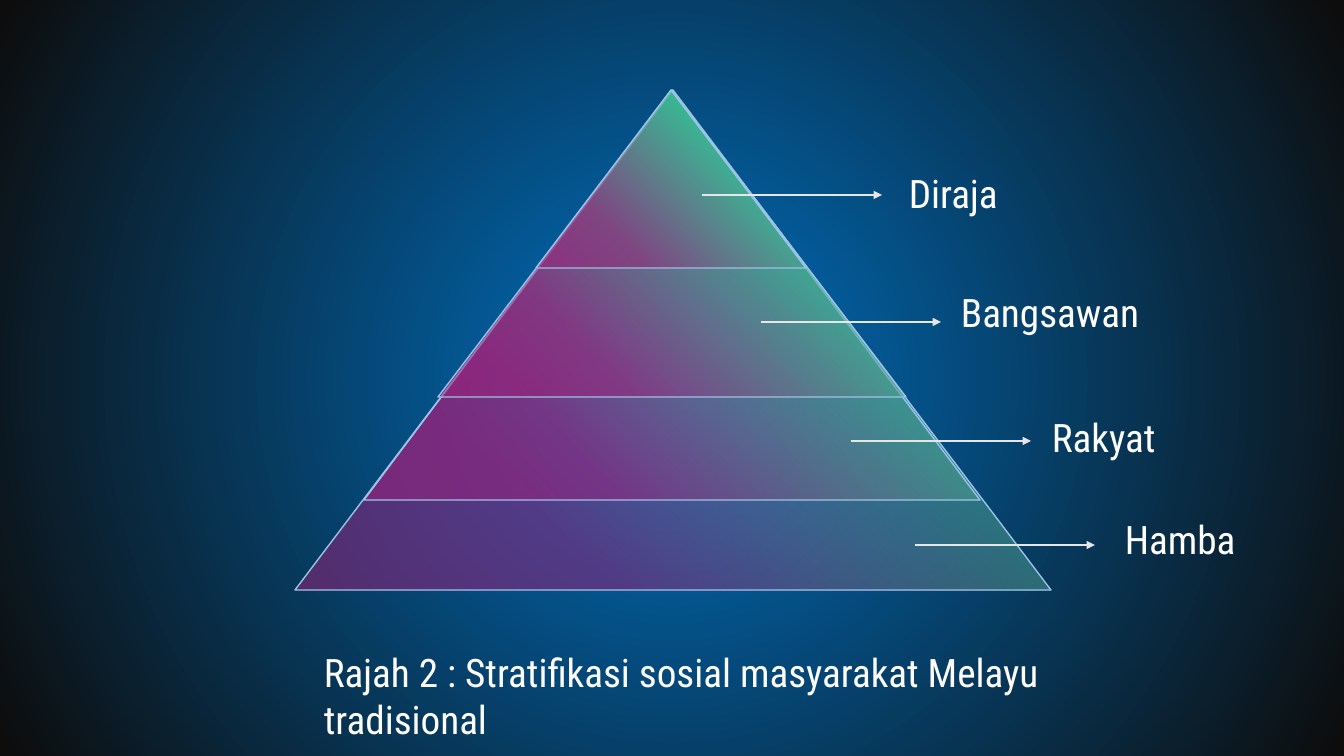
from dataclasses import dataclass

from pptx import Presentation
from pptx import util as u
from pptx.dml.color import RGBColor
from pptx.enum import shapes, text
from pptx.oxml import parse_xml
from pptx.oxml.ns import nsdecls, qn

SCALE = 914400 / 100.8


def px(n):
    return u.Emu(round(n * SCALE))


@dataclass(frozen=True)
class Theme:
    font: str = "Roboto Condensed"
    size: int = 28
    ink: str = "FFFFFF"
    edge: str = "9DC3E6"
    arrow: str = "E7E6E6"
    night: tuple = ((0, "0070C0", 100), (99, "0D0D0D", 100))
    tier: tuple = ((15, "19FBA0", 50), (74, "A0207B", 50))
    center: tuple = (50, 50, 50, 50)
    corner: tuple = (100, 0, 0, 100)


def write(frame, words, font, size, color):
    run = frame.paragraphs[0].add_run()
    run.text = words
    run.font.name = font
    run.font.size = u.Pt(size)
    run.font.color.rgb = RGBColor.from_string(color)


def glow(shape, stops, focus):
    marks = "".join(
        f'<a:gs pos="{pos * 1000}"><a:srgbClr val="{color}">'
        f'<a:alpha val="{alpha * 1000}"/></a:srgbClr></a:gs>'
        for pos, color, alpha in stops
    )
    sides = " ".join(f'{side}="{n * 1000}"' for side, n in zip("ltrb", focus))
    fill = parse_xml(
        f'<a:gradFill {nsdecls("a")} rotWithShape="1"><a:gsLst>{marks}</a:gsLst>'
        f'<a:path path="circle"><a:fillToRect {sides}/></a:path></a:gradFill>'
    )
    shape.element.spPr.find(qn("a:prstGeom")).addnext(fill)


class Board:
    def __init__(self, slide, theme):
        self.items = slide.shapes
        self.theme = theme

    def shape(self, kind, box, stops, focus, edge=None):
        item = self.items.add_shape(kind, *map(px, box))
        item.shadow.inherit = False
        glow(item, stops, focus)
        if edge:
            item.line.color.rgb = RGBColor.from_string(edge)
            item.line.width = u.Pt(1)
        else:
            item.line.fill.background()

    def arrow(self, x, y, length):
        line = self.items.add_connector(
            shapes.MSO_CONNECTOR.STRAIGHT, px(x), px(y), px(x + length), px(y)
        )
        line.line.color.rgb = RGBColor.from_string(self.theme.arrow)
        line.line.width = u.Pt(1.5)
        line.line.fill
        props = line.element.spPr
        props.find(qn("a:ln")).append(
            parse_xml(f'<a:tailEnd {nsdecls("a")} type="triangle"/>')
        )
        props.append(parse_xml(f'<a:effectLst {nsdecls("a")}/>'))

    def label(self, words, x, y, width):
        frame = self.items.add_textbox(px(x), px(y), px(width), px(57)).text_frame
        frame.word_wrap = True
        frame.auto_size = text.MSO_AUTO_SIZE.SHAPE_TO_FIT_TEXT
        look = self.theme
        write(frame, words, font=look.font, size=look.size, color=look.ink)


TIERS = [(295, 756, 500), (364, 616, 410), (438, 468, 307), (536, 270, 178)]
RANKS = [
    ("Diraja", (702, 195), (899, 164)),
    ("Bangsawan", (761, 322), (951, 283)),
    ("Rakyat", (851, 441), (1042, 408)),
    ("Hamba", (915, 545), (1115, 510)),
]


def main():
    deck = Presentation()
    deck.slide_width, deck.slide_height = px(1344), px(756)
    theme = Theme()
    board = Board(deck.slides.add_slide(deck.slide_layouts[6]), theme)
    kinds = shapes.MSO_SHAPE

    board.shape(kinds.RECTANGLE, (0, 0, 1344, 756), theme.night, theme.center)
    for left, width, height in TIERS:
        board.shape(
            kinds.ISOSCELES_TRIANGLE, (left, 90, width, height),
            theme.tier, theme.corner, theme.edge,
        )
    for _, start, _ in RANKS:
        board.arrow(*start, 180)
    for name, _, spot in RANKS:
        board.label(name, *spot, 229)
    board.label(
        "Rajah 2 : Stratifikasi sosial masyarakat Melayu tradisional", 314, 643, 780
    )
    deck.save("out.pptx")


if __name__ == "__main__":
    main()
